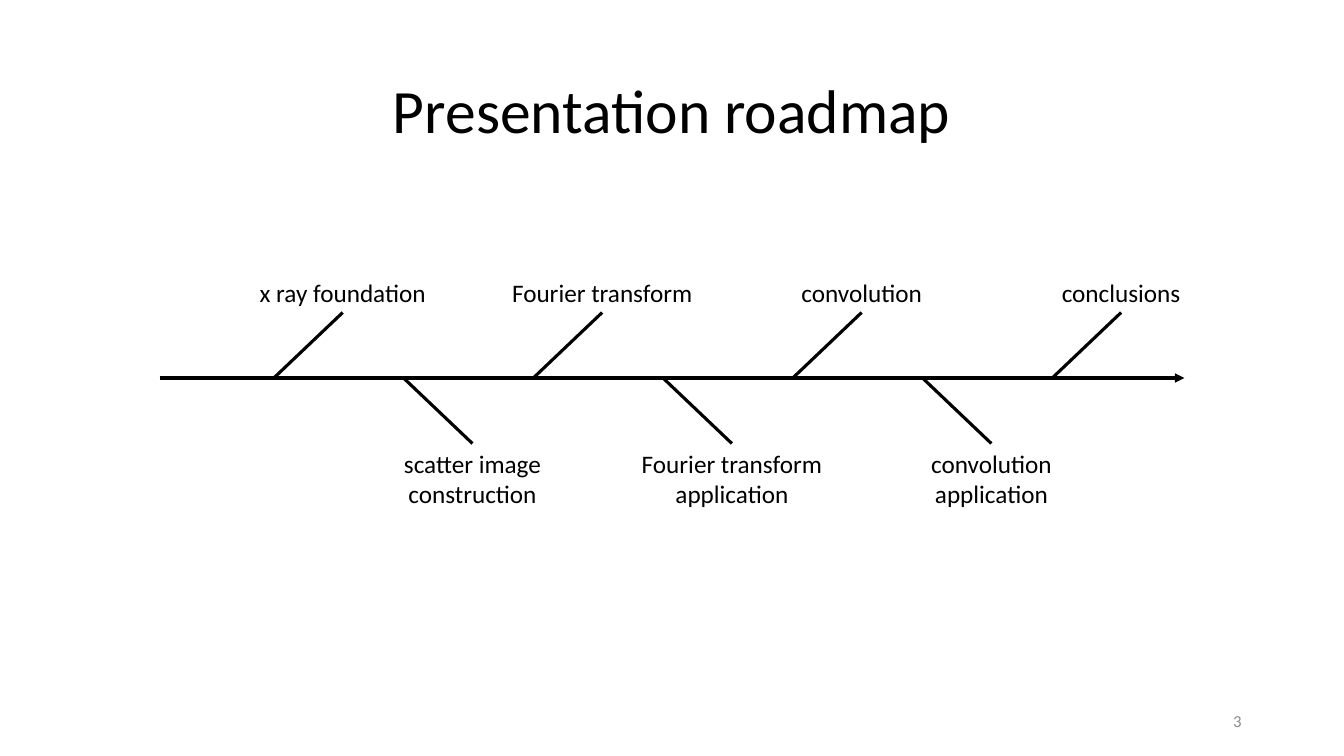
import dataclasses

import lxml.etree
import pptx
import pptx.dml.color
import pptx.enum.shapes
import pptx.enum.text
import pptx.oxml.ns
import pptx.util

Pt = pptx.util.Pt
ALIGN = pptx.enum.text.PP_ALIGN
ANCHOR = pptx.enum.text.MSO_ANCHOR
FIT = pptx.enum.text.MSO_AUTO_SIZE

FONT = "Calibri"
COLORS = {"ink": "000000", "page": "8C8C8C"}

# Timeline geometry, in points
AXIS_Y = 270
AXIS_LEFT, AXIS_RIGHT = 114, 846
FIRST_X, STEP = 195.6, 92.67
SPUR_W, SPUR_H = 49.2, 46.8
LINE_H, PAD = 21.8, 7.2


@dataclasses.dataclass
class Stop:
    lines: list[str]
    width: float


STOPS = [
    Stop(["x ray foundation"], 134.6),
    Stop(["scatter image", "construction"], 113.8),
    Stop(["Fourier transform"], 144.7),
    Stop(["Fourier transform", "application"], 144.7),
    Stop(["convolution"], 101.5),
    Stop(["convolution", "application"], 101.5),
    Stop(["conclusions"], 100.1),
]


def color(name: str) -> pptx.dml.color.RGBColor:
    return pptx.dml.color.RGBColor.from_string(COLORS[name])


def write(frame, lines: list[str], size: float, align, ink: str = "ink") -> None:
    for index, line in enumerate(lines):
        para = frame.add_paragraph() if index else frame.paragraphs[0]
        para.alignment = align
        run = para.add_run()
        run.text = line
        run.font.name = FONT
        run.font.size = Pt(size)
        run.font.color.rgb = color(ink)


def draw_line(slide, x1: float, y1: float, x2: float, y2: float,
              arrow: bool = False) -> None:
    line = slide.shapes.add_connector(
        pptx.enum.shapes.MSO_CONNECTOR.STRAIGHT, Pt(x1), Pt(y1), Pt(x2), Pt(y2))
    line.line.color.rgb = color("ink")
    line.line.width = Pt(2.25)
    qn = pptx.oxml.ns.qn
    props = line._element.spPr
    if arrow:
        tip = lxml.etree.SubElement(props.find(qn("a:ln")), qn("a:tailEnd"))
        tip.set("type", "triangle")
    lxml.etree.SubElement(props, qn("a:effectLst"))


def draw_stop(slide, index: int, stop: Stop) -> None:
    """Draw a spur and its label, above the axis for even stops, else below."""
    above = index % 2 == 0
    x = FIRST_X + index * STEP
    end_x = x + SPUR_W
    end_y = AXIS_Y - SPUR_H if above else AXIS_Y + SPUR_H
    draw_line(slide, x, AXIS_Y, end_x, end_y)

    height = len(stop.lines) * LINE_H + PAD
    top = end_y - height if above else end_y
    box = slide.shapes.add_textbox(
        Pt(end_x - stop.width / 2), Pt(top), Pt(stop.width), Pt(height))
    frame = box.text_frame
    frame.word_wrap = False
    frame.auto_size = FIT.SHAPE_TO_FIT_TEXT
    write(frame, stop.lines, 18, ALIGN.CENTER)


def main() -> None:
    deck = pptx.Presentation()
    deck.slide_width, deck.slide_height = Pt(960), Pt(540)
    slide = deck.slides.add_slide(deck.slide_layouts[5])

    # Title
    title = slide.shapes.title
    title.left, title.top = Pt(66), Pt(28.8)
    title.width, title.height = Pt(828), Pt(104.4)
    title.text_frame.vertical_anchor = ANCHOR.MIDDLE
    write(title.text_frame, ["Presentation roadmap"], 44, ALIGN.CENTER)
    title.text_frame.paragraphs[0].line_spacing = 0.9

    # Timeline
    draw_line(slide, AXIS_LEFT, AXIS_Y, AXIS_RIGHT, AXIS_Y, arrow=True)
    for index, stop in enumerate(STOPS):
        draw_stop(slide, index, stop)

    # Page number
    page = slide.shapes.add_textbox(Pt(678), Pt(500.4), Pt(216), Pt(28.8))
    page.text_frame.word_wrap = True
    page.text_frame.vertical_anchor = ANCHOR.MIDDLE
    write(page.text_frame, ["3"], 12, ALIGN.RIGHT, "page")

    deck.save("out.pptx")


if __name__ == "__main__":
    main()
